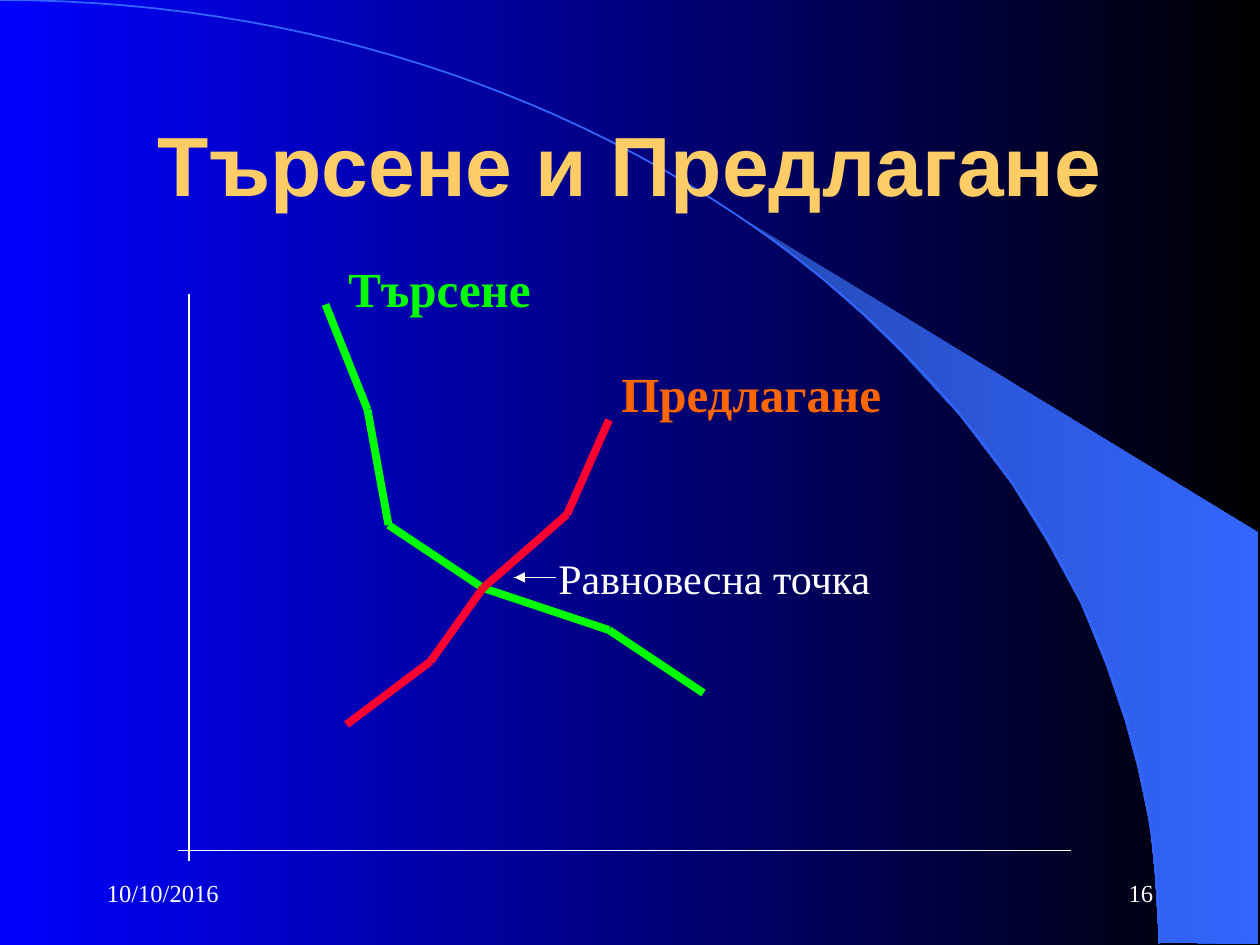
from dataclasses import dataclass
from itertools import pairwise

import pptx
import pptx.dml.color
import pptx.enum.dml
import pptx.enum.text
import pptx.oxml
import pptx.oxml.ns
import pptx.util

Pt = pptx.util.Pt
ALIGN = pptx.enum.text.PP_ALIGN
ANCHOR = pptx.enum.text.MSO_ANCHOR
Point = tuple[float, float]

WHITE, GREEN, RED, ORANGE = "FFFFFF", "00FF00", "FF0033", "FF6600"
BLUE, BLACK, GOLD = "0000FF", "000000", "FFCC66"
RIM, RIM_DARK = "3366FF", "2449B6"
SERIF = "Times New Roman"


@dataclass
class Label:
    text: str
    left: float
    top: float
    width: float
    height: float
    size: float
    color: str = WHITE
    bold: bool = False
    align: ALIGN = ALIGN.LEFT
    anchor: ANCHOR = ANCHOR.TOP


@dataclass
class Curve:
    points: list[Point]
    color: str
    weight: float


def rgb(color: str) -> pptx.dml.color.RGBColor:
    return pptx.dml.color.RGBColor.from_string(color)


def set_gradient(fill, start: str, end: str) -> None:
    fill.gradient()
    fill.gradient_angle = 0
    for stop, color, position in zip(fill.gradient_stops, (start, end), (0, 1)):
        stop.color.rgb = rgb(color)
        stop.position = position


def format_text(shape, text: str, font: str, size: float, color: str,
                bold: bool, align: ALIGN, anchor: ANCHOR) -> None:
    tf = shape.text_frame
    tf.word_wrap = True
    tf.vertical_anchor = anchor
    p = tf.paragraphs[0]
    p.text = text
    p.alignment = align
    p.font.name, p.font.size, p.font.bold = font, Pt(size), bold
    p.font.color.rgb = rgb(color)


def add_label(slide, label: Label) -> None:
    sp = slide.shapes.add_textbox(Pt(label.left), Pt(label.top),
                                  Pt(label.width), Pt(label.height))
    format_text(sp, label.text, SERIF, label.size, label.color,
                label.bold, label.align, label.anchor)


def add_line(slide, start: Point, end: Point, color: str, weight: float,
             arrow: bool = False) -> None:
    line = slide.shapes.add_connector(pptx.enum.shapes.MSO_CONNECTOR.STRAIGHT,
                                      *map(Pt, start + end))
    line.line.color.rgb = rgb(color)
    line.line.width = Pt(weight)
    if arrow:
        ln = line.line._get_or_add_ln()
        ln.append(pptx.oxml.parse_xml(
            f'<a:tailEnd {pptx.oxml.ns.nsdecls("a")} type="triangle"/>'))
    line._element.spPr.append(pptx.oxml.parse_xml(
        f'<a:effectLst {pptx.oxml.ns.nsdecls("a")}/>'))


def add_curve(slide, curve: Curve) -> None:
    for start, end in pairwise(curve.points):
        add_line(slide, start, end, curve.color, curve.weight)


def add_outline(slide, points: list[Point], close: bool):
    scaled = [(Pt(x), Pt(y)) for x, y in points]
    builder = slide.shapes.build_freeform(*scaled[0])
    builder.add_line_segments(scaled[1:], close=close)
    sp = builder.convert_to_shape()
    sp.shadow.inherit = False
    return sp


def bezier(controls: list[Point], steps: int) -> list[Point]:
    def at(t: float) -> Point:
        weights = ((1 - t) ** 3, 3 * t * (1 - t) ** 2, 3 * t * t * (1 - t), t ** 3)
        return tuple(sum(w * c[axis] for w, c in zip(weights, controls))
                     for axis in (0, 1))
    return [at(i / steps) for i in range(steps + 1)]


RIM_WEDGE = [(662.4, 538.6), (719.3, 539.3), (719.3, 304.6), (424.1, 124.6),
             (449.3, 143.3), (470.2, 159.8), (493.2, 180), (515.5, 201.6),
             (548.6, 237.6), (578.2, 276.5), (599, 310.3), (617.8, 344.9),
             (632.2, 380.2), (643, 411.8), (650.2, 438.5), (657.4, 472.3),
             (660.2, 501.1)]
RIM_ARC = [(0, 0), (365.8, 0), (662.4, 241.2), (662.4, 539.3)]

EQUILIBRIUM = (276, 336)
CURVES = [
    # axes
    Curve([(108, 168), (108, 492)], WHITE, 0.75),
    Curve([(102, 486), (612, 486)], WHITE, 0.75),
    # demand and supply
    Curve([(186, 174), (210, 234), (222, 300), EQUILIBRIUM, (348, 360), (402, 396)],
          GREEN, 4.5),
    Curve([(198, 414), (246, 378), EQUILIBRIUM, (324, 294), (348, 240)], RED, 4.5),
]
LABELS = [
    Label("10/10/2016", 54, 492, 150, 36, 14, anchor=ANCHOR.MIDDLE),
    Label("16", 516, 492, 150, 36, 14, align=ALIGN.RIGHT, anchor=ANCHOR.MIDDLE),
    Label("Търсене", 192, 144, 138, 41, 28, GREEN, True),
    Label("Предлагане", 348, 204, 222, 41, 28, ORANGE, True),
    Label("Равновесна точка", 312, 312, 252, 36, 24),
]


def main() -> None:
    prs = pptx.Presentation()
    prs.slide_width, prs.slide_height = Pt(720), Pt(540)
    slide = prs.slides.add_slide(prs.slide_layouts[5])

    # Background and curved rim
    set_gradient(slide.background.fill, BLUE, BLACK)
    wedge = add_outline(slide, RIM_WEDGE, close=True)
    set_gradient(wedge.fill, RIM_DARK, RIM)
    wedge.line.fill.background()
    arc = add_outline(slide, bezier(RIM_ARC, 60), close=False)
    arc.fill.background()
    arc.line.color.rgb = rgb(RIM)
    arc.line.width = Pt(1)

    # Title, brought in front of the rim
    title = slide.shapes.title
    title.left, title.top, title.width, title.height = map(Pt, (54, 48, 612, 90))
    format_text(title, "Търсене и Предлагане", "Arial", 48, GOLD, True,
                ALIGN.CENTER, ANCHOR.MIDDLE)
    slide.shapes._spTree.append(title._element)

    # Diagram
    for curve in CURVES:
        add_curve(slide, curve)
    for label in LABELS:
        add_label(slide, label)

    # Pointer to the equilibrium
    add_line(slide, (294, 330), (318, 330), WHITE, 0.75)
    add_line(slide, (312, 330), (294, 330), WHITE, 0.75, arrow=True)

    prs.save("out.pptx")


if __name__ == "__main__":
    main()
